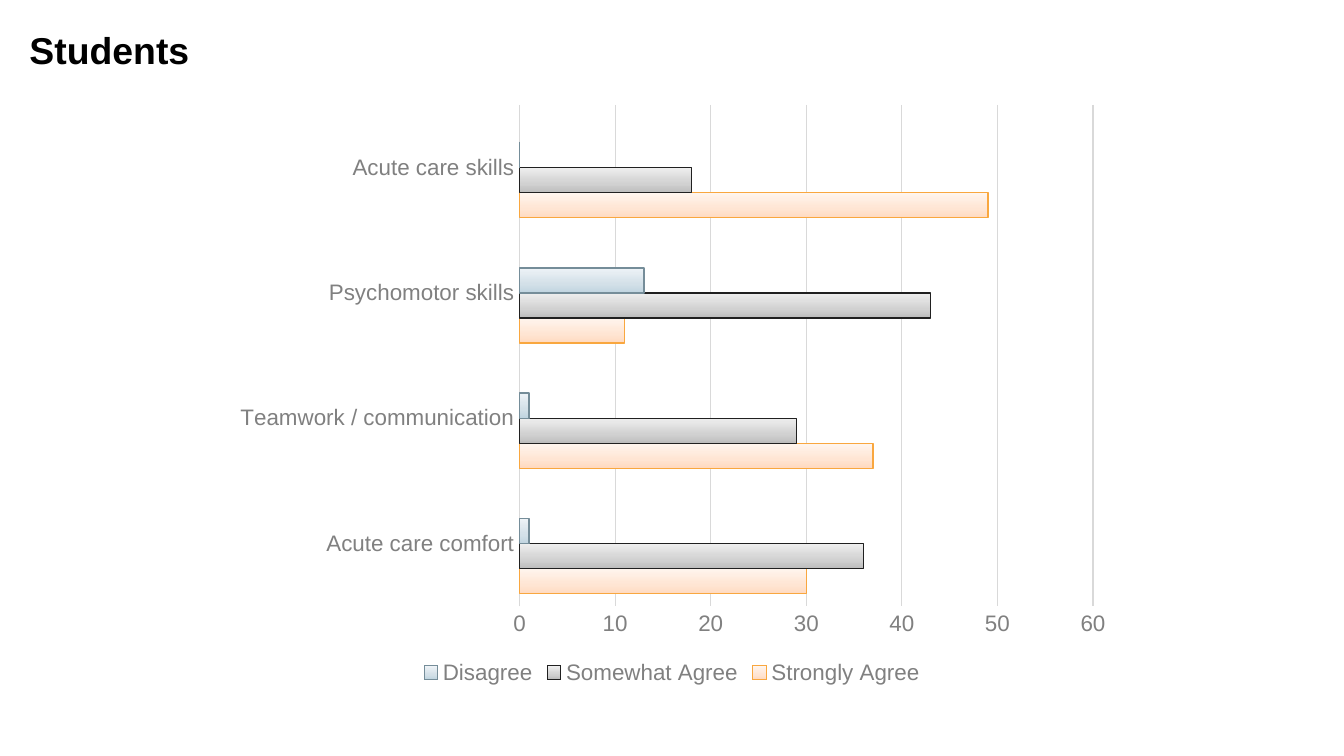
from typing import NamedTuple

from lxml import etree
from pptx import Presentation
from pptx import util as u
from pptx.chart.data import CategoryChartData
from pptx.dml.color import RGBColor
from pptx.enum import chart as ch
from pptx.enum import text
from pptx.oxml import parse_xml
from pptx.oxml.ns import nsdecls, qn

SCALE = 914400 / 134.4  # EMU in one px
FONT = "Arial"
BLACK = RGBColor(0x00, 0x00, 0x00)
GRAY = RGBColor(0x80, 0x80, 0x80)
PALE = RGBColor(0xD9, 0xD9, 0xD9)
ORANGE = RGBColor(0xF9, 0xA7, 0x3F)
DARK = RGBColor(0x20, 0x20, 0x20)
SLATE = RGBColor(0x75, 0x8D, 0x99)
PEACH = [RGBColor(0xFF, 0xDA, 0xC0), RGBColor(0xFF, 0xE5, 0xD3), RGBColor(0xFF, 0xF5, 0xEE)]
SILVER = [RGBColor(0xBD, 0xBD, 0xBD), RGBColor(0xD1, 0xD1, 0xD1), RGBColor(0xEE, 0xEE, 0xEE)]
ICE = [RGBColor(0xC0, 0xD4, 0xE0), RGBColor(0xD3, 0xE0, 0xE8), RGBColor(0xEE, 0xF3, 0xF7)]
STOPS = (0, 35, 100)  # percent, from bottom to top


class Answer(NamedTuple):
    name: str
    vals: list[int | None]
    fill: list[RGBColor]
    edge: RGBColor


SKILLS = ["Acute care comfort", "Teamwork / communication",
          "Psychomotor skills", "Acute care skills"]
ANSWERS = [
    Answer("Strongly Agree", [30, 37, 11, 49], PEACH, ORANGE),
    Answer("Somewhat Agree", [36, 29, 43, 18], SILVER, DARK),
    Answer("Disagree", [1, 1, 13, 0], ICE, SLATE),
    Answer("Column1", [None] * 4, PEACH, ORANGE),  # empty slot above the bars
]


def px(n: int) -> u.Emu:
    return u.Emu(round(n * SCALE))


def style(font, size: int, color: RGBColor, bold: bool = False) -> None:
    font.name, font.size, font.bold = FONT, u.Pt(size), bold
    font.color.rgb = color


def rule(line, color: RGBColor) -> None:
    line.color.rgb = color
    line.width = u.Pt(0.75)


def shade(form, tones: list[RGBColor]) -> None:
    """Give a bar a vertical gradient of three tones."""
    form.fill.gradient()
    grad = form._element.find(qn("c:spPr")).find(qn("a:gradFill"))
    for part in list(grad):
        grad.remove(part)
    stops = etree.SubElement(grad, qn("a:gsLst"))
    for pos, tone in zip(STOPS, tones):
        stop = etree.SubElement(stops, qn("a:gs"), pos=str(pos * 1000))
        etree.SubElement(stop, qn("a:srgbClr"), val=str(tone))
    etree.SubElement(grad, qn("a:lin"), ang=str(270 * 60000), scaled="0")


def place(chart, x: float, y: float, w: float, h: float) -> None:
    """Fix the inner plot area, in parts of the chart."""
    area = chart._chartSpace.chart.plotArea
    for old in area.findall(qn("c:layout")):
        area.remove(old)
    sizes = "".join(f'<c:{k} val="{v}"/>' for k, v in zip("xywh", (x, y, w, h)))
    area.insert(0, parse_xml(
        f'<c:layout {nsdecls("c")}><c:manualLayout><c:layoutTarget val="inner"/>'
        f'<c:xMode val="edge"/><c:yMode val="edge"/>{sizes}'
        f'</c:manualLayout></c:layout>'))


def add_bars(slide) -> None:
    data = CategoryChartData()
    data.categories = SKILLS
    for ans in ANSWERS:
        data.add_series(ans.name, ans.vals)
    chart = slide.shapes.add_chart(ch.XL_CHART_TYPE.BAR_CLUSTERED, px(224), px(93),
                                   px(896), px(597), data).chart
    style(chart.font, 10, BLACK)
    chart.has_title = False
    place(chart, 0.33, 0.02, 0.64, 0.84)

    # Bars
    plot = chart.plots[0]
    plot.gap_width, plot.overlap = 100, 0
    plot.vary_by_categories = False
    for bar, ans in zip(plot.series, ANSWERS):
        shade(bar.format, ans.fill)
        rule(bar.format.line, ans.edge)

    # Axes
    cat, val = chart.category_axis, chart.value_axis
    for axis in (cat, val):
        axis.major_tick_mark = axis.minor_tick_mark = ch.XL_TICK_MARK.NONE
        style(axis.tick_labels.font, 12, GRAY)
    rule(cat.format.line, PALE)
    val.format.line.fill.background()
    val.minimum_scale, val.maximum_scale, val.major_unit = 0, 60, 10
    val.has_major_gridlines = True
    rule(val.major_gridlines.format.line, PALE)

    # Legend, listed in reverse: entry 0 is the empty slot
    chart.has_legend = True
    key = chart.legend
    key.position = ch.XL_LEGEND_POSITION.BOTTOM
    key.include_in_layout = False
    style(key.font, 12, GRAY)
    key._element.find(qn("c:legendPos")).addnext(parse_xml(
        f'<c:legendEntry {nsdecls("c")}><c:idx val="0"/><c:delete val="1"/></c:legendEntry>'))


def add_title(slide, words: str) -> None:
    title = slide.shapes.title
    title.left, title.top, title.width, title.height = px(16), px(9), px(247), px(81)
    frame = title.text_frame
    frame.text = words
    frame.word_wrap = True
    frame.auto_size = text.MSO_AUTO_SIZE.NONE
    frame.vertical_anchor = text.MSO_ANCHOR.MIDDLE
    frame.margin_left = frame.margin_right = u.Inches(0.1)
    frame.margin_top = frame.margin_bottom = u.Inches(0.1)
    para = frame.paragraphs[0]
    para.alignment = text.PP_ALIGN.LEFT
    style(para.runs[0].font, 20, BLACK, bold=True)


def main() -> None:
    deck = Presentation()
    deck.slide_width, deck.slide_height = px(1344), px(756)
    slide = deck.slides.add_slide(deck.slide_layouts[5])
    add_title(slide, "Students")
    add_bars(slide)
    deck.save("out.pptx")


if __name__ == "__main__":
    main()
